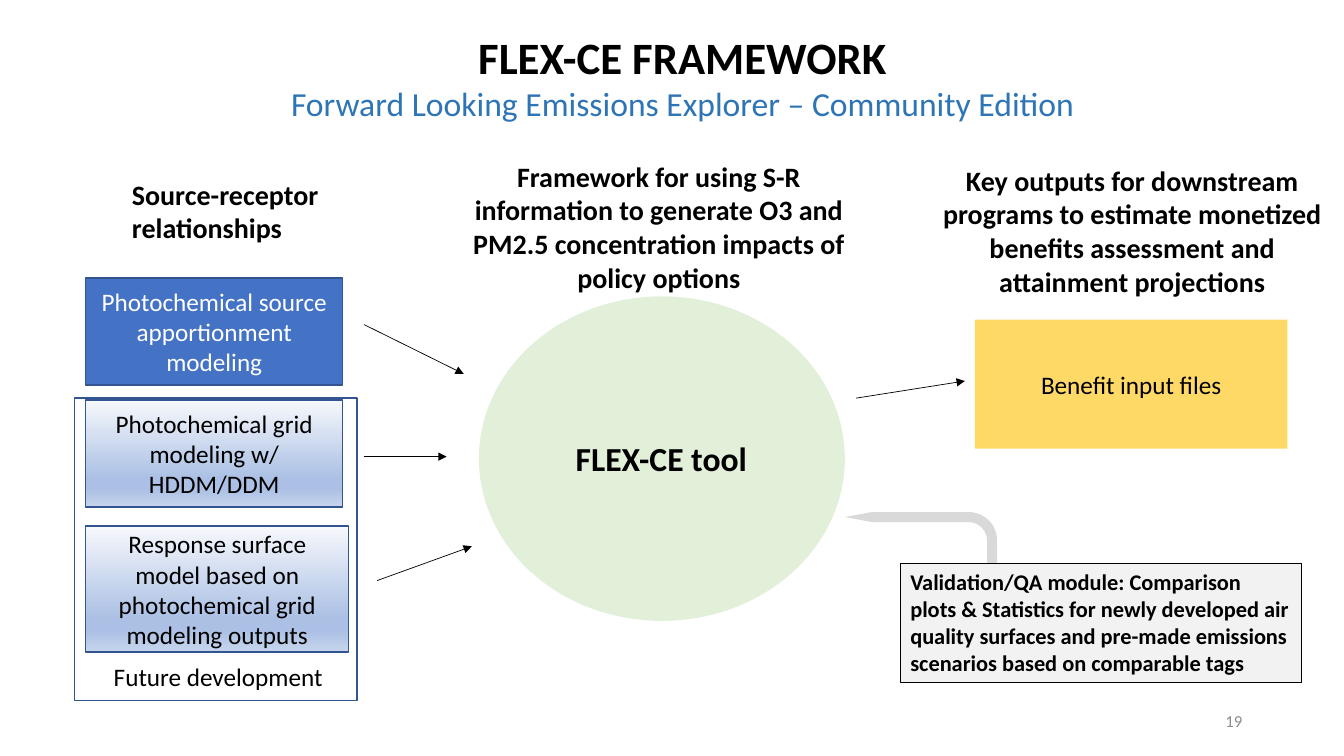
from pptx import Presentation
from pptx.dml.color import RGBColor
from pptx.enum.shapes import MSO_CONNECTOR, MSO_SHAPE
from pptx.enum.text import MSO_ANCHOR, MSO_AUTO_SIZE, PP_ALIGN
from pptx.oxml import parse_xml
from pptx.oxml.ns import nsdecls, qn
from pptx.util import Inches, Pt
from lxml.etree import SubElement

COLORS = {
    "black": "000000",
    "white": "FFFFFF",
    "blue": "4472C4",
    "outline": "325491",
    "subtitle": "2E75B6",
    "green": "E2F0D9",
    "yellow": "FFD966",
    "arrow": "D9D9D9",
    "panel": "F2F2F2",
    "number": "8C8C8C",
}
FUTURE_GRADIENT = [(0, "F6F8FC"), (74, "ABC0E4"), (83, "ABC0E4"), (100, "C7D5ED")]


def color(name):
    """Return the named colour."""
    return RGBColor.from_string(COLORS[name])


def write(frame, text, size=18, font_color="black", bold=False,
          align=PP_ALIGN.CENTER, anchor=MSO_ANCHOR.TOP):
    """Add a formatted paragraph to a text frame."""
    frame.word_wrap = True
    frame.auto_size = MSO_AUTO_SIZE.NONE
    frame.vertical_anchor = anchor
    paragraph = frame.add_paragraph() if frame.text else frame.paragraphs[0]
    paragraph.alignment = align
    run = paragraph.add_run()
    run.text = text
    run.font.name = "Calibri"
    run.font.size = Pt(size)
    run.font.bold = bold
    run.font.color.rgb = color(font_color)


def place(shape, box):
    """Move and size a shape in inches."""
    shape.left, shape.top, shape.width, shape.height = map(Inches, box)


def add_label(slide, box, text, **text_format):
    """Add a text box."""
    label = slide.shapes.add_textbox(*map(Inches, box))
    write(label.text_frame, text, **text_format)


def add_block(slide, box, kind=MSO_SHAPE.RECTANGLE, fill=None, line=None,
              line_width=1, text=None, **text_format):
    """Add a preset shape with optional fill, line and text."""
    shape = slide.shapes.add_shape(kind, *map(Inches, box))
    shape.shadow.inherit = False
    if fill:
        shape.fill.solid()
        shape.fill.fore_color.rgb = color(fill)
    else:
        shape.fill.background()
    if line:
        shape.line.color.rgb = color(line)
        shape.line.width = Pt(line_width)
    else:
        shape.line.fill.background()
    if text:
        write(shape.text_frame, text, **text_format)
    return shape


def set_gradient(shape, stops):
    """Fill a shape with a gradient running from top to bottom."""
    stop_xml = "".join(
        f'<a:gs pos="{position * 1000}"><a:srgbClr val="{value}"/></a:gs>'
        for position, value in stops)
    gradient = parse_xml(
        f'<a:gradFill {nsdecls("a")} rotWithShape="1"><a:gsLst>{stop_xml}</a:gsLst>'
        '<a:lin ang="5400000" scaled="0"/></a:gradFill>')
    properties = shape._element.spPr
    properties.replace(properties.find(qn("a:noFill")), gradient)


def add_arrow(slide, start, end):
    """Add a thin black arrow between two points."""
    connector = slide.shapes.add_connector(
        MSO_CONNECTOR.STRAIGHT, *map(Inches, start + end))
    connector.line.color.rgb = color("black")
    connector.line.width = Pt(0.5)
    SubElement(connector.line._get_or_add_ln(), qn("a:tailEnd"), type="triangle")
    SubElement(connector._element.spPr, qn("a:effectLst"))


def add_title(slide):
    """Fill the title placeholder with the heading and its subtitle."""
    title = slide.shapes.title
    place(title, (1.95, 0.24, 9.64, 1.04))
    write(title.text_frame, "FLEX-CE FRAMEWORK", size=32, bold=True)
    write(title.text_frame, "Forward Looking Emissions Explorer – Community Edition",
          size=24, font_color="subtitle")


def add_sources(slide):
    """Add the column of source-receptor models."""
    add_label(slide, (1.21, 1.71, 2.19, 0.77), "Source-receptor relationships",
              size=20, bold=True, align=PP_ALIGN.LEFT)
    add_block(slide, (0.74, 3.95, 2.8, 3), line="outline")
    add_block(slide, (0.85, 2.76, 2.55, 1.06), fill="blue", line="outline",
              text="Photochemical source apportionment modeling",
              font_color="white", anchor=MSO_ANCHOR.MIDDLE)
    future_models = [
        ((0.85, 3.97, 2.55, 1.06), "Photochemical grid modeling w/ HDDM/DDM"),
        ((0.85, 5.22, 2.61, 1.25),
         "Response surface model based on photochemical grid modeling outputs"),
    ]
    for box, text in future_models:
        block = add_block(slide, box, line="outline", text=text,
                          anchor=MSO_ANCHOR.MIDDLE)
        set_gradient(block, FUTURE_GRADIENT)
    add_label(slide, (1.03, 6.51, 2.37, 0.4), "Future development",
              align=PP_ALIGN.LEFT)


def add_tool(slide):
    """Add the central tool and its heading."""
    add_block(slide, (4.75, 2.94, 3.63, 3.22), kind=MSO_SHAPE.OVAL, fill="green")
    add_label(slide, (4.35, 1.53, 4.37, 1.45),
              "Framework for using S-R information to generate O3 and PM2.5 "
              "concentration impacts of policy options", size=20, bold=True)
    add_label(slide, (5.43, 4.3, 2.26, 0.74), "FLEX-CE tool", size=24, bold=True)


def add_outputs(slide):
    """Add the outputs column and the validation module."""
    add_label(slide, (9.21, 1.57, 4.04, 1.45),
              "Key outputs for downstream programs to estimate monetized "
              "benefits assessment and attainment projections", size=20, bold=True)
    add_block(slide, (9.67, 3.17, 3.1, 1.28), fill="yellow",
              text="Benefit input files", anchor=MSO_ANCHOR.MIDDLE)
    feedback = add_block(slide, (8.38, 5.08, 1.51, 1.08),
                         kind=MSO_SHAPE.BENT_ARROW, fill="arrow")
    for index, value in enumerate((0.25, 0.046, 0.25, 0.262)):
        feedback.adjustments[index] = value
    feedback._element.spPr.xfrm.set("flipH", "1")
    add_block(slide, (8.93, 5.59, 3.98, 1.18), fill="panel", line="black",
              line_width=0.75, size=16, bold=True, align=PP_ALIGN.LEFT,
              text="Validation/QA module: Comparison plots & Statistics for newly "
                   "developed air quality surfaces and pre-made emissions "
                   "scenarios based on comparable tags")


def main():
    """Build and save the framework slide."""
    presentation = Presentation()
    presentation.slide_width = Inches(13.33)
    presentation.slide_height = Inches(7.5)
    slide = presentation.slides.add_slide(presentation.slide_layouts[5])
    add_title(slide)
    add_sources(slide)
    add_tool(slide)
    add_outputs(slide)
    arrows = [
        ((3.61, 3.22), (4.6, 3.71)),
        ((3.61, 4.53), (4.43, 4.53)),
        ((3.74, 5.76), (4.68, 5.42)),
        ((8.49, 3.95), (9.57, 3.78)),
    ]
    for start, end in arrows:
        add_arrow(slide, start, end)
    add_label(slide, (9.42, 6.95, 3, 0.4), "19", size=12, font_color="number",
              align=PP_ALIGN.RIGHT, anchor=MSO_ANCHOR.MIDDLE)
    presentation.save("out.pptx")


if __name__ == "__main__":
    main()
